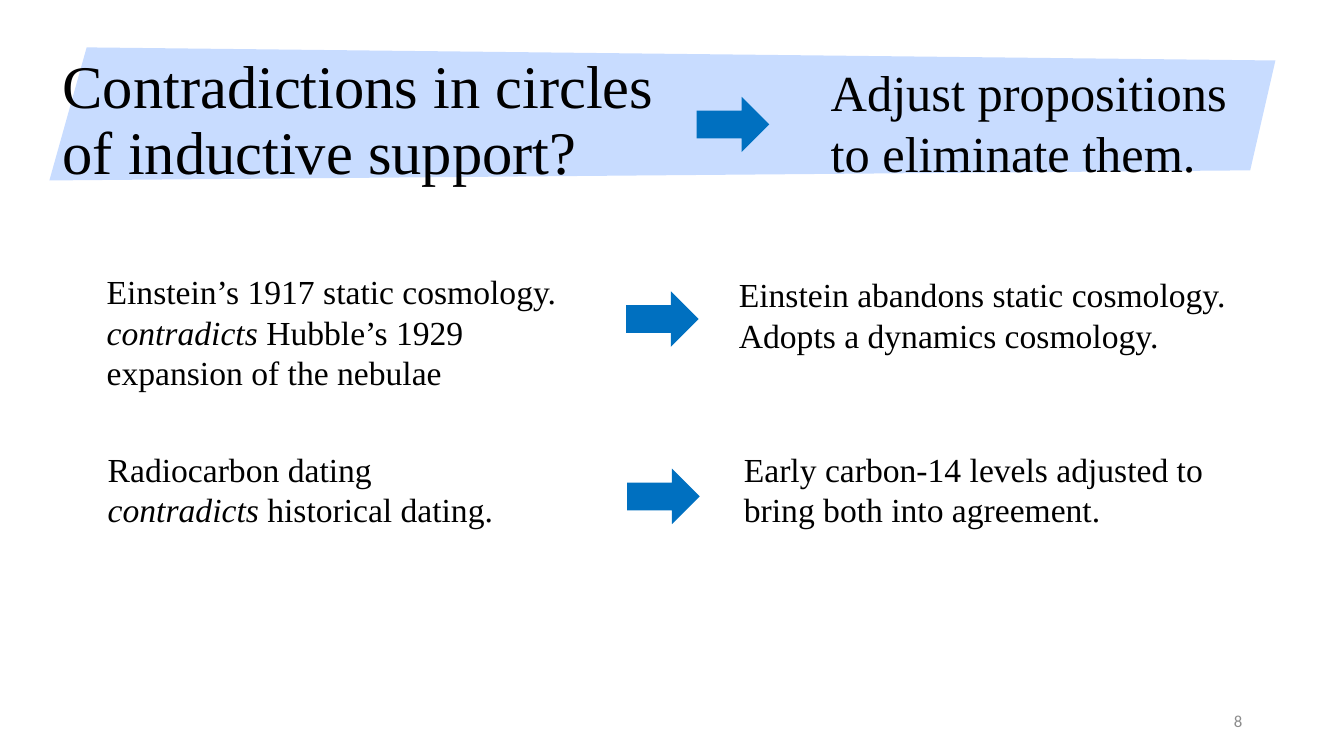
from dataclasses import dataclass

from pptx import Presentation
from pptx.dml.color import RGBColor
from pptx.enum.shapes import MSO_SHAPE
from pptx.enum.text import MSO_ANCHOR, MSO_AUTO_SIZE, PP_ALIGN
from pptx.util import Inches, Pt

RIGHT_ARROW = MSO_SHAPE.RIGHT_ARROW
TOP, MIDDLE = MSO_ANCHOR.TOP, MSO_ANCHOR.MIDDLE
LEFT, RIGHT = PP_ALIGN.LEFT, PP_ALIGN.RIGHT
NO_FIT = MSO_AUTO_SIZE.NONE


@dataclass(frozen=True)
class Theme:
    ink: RGBColor = RGBColor(0x00, 0x00, 0x00)
    grey: RGBColor = RGBColor(0x8C, 0x8C, 0x8C)
    banner: RGBColor = RGBColor(0xC8, 0xDC, 0xFF)
    arrow: RGBColor = RGBColor(0x00, 0x70, 0xC0)
    serif: str = "Times New Roman"
    sans: str = "Calibri"
    title: float = 43.2
    answer: float = 36
    body: float = 24
    number: float = 12


THEME = Theme()


def write(box, place, paragraphs, size, font=THEME.serif, color=THEME.ink,
          align=LEFT, anchor=TOP, spacing=1.0):
    for name, value in zip(("left", "top", "width", "height"), place):
        setattr(box, name, Inches(value))
    frame = box.text_frame
    frame_format = {"word_wrap": True, "auto_size": NO_FIT, "vertical_anchor": anchor}
    for name, value in frame_format.items():
        setattr(frame, name, value)
    for index, spans in enumerate(paragraphs):
        para = frame.add_paragraph() if index else frame.paragraphs[0]
        para.alignment = align
        para.line_spacing = spacing
        for text, italic in spans:
            span = para.add_run()
            span.text = text
            span.font.color.rgb = color
            for name, value in {"name": font, "size": Pt(size), "italic": italic}.items():
                setattr(span.font, name, value)


def add_arrow(shapes, left, top):
    arrow = shapes.add_shape(RIGHT_ARROW, Inches(left), Inches(top), Inches(0.72), Inches(0.55))
    arrow.shadow.inherit = False
    arrow.fill.solid()
    arrow.fill.fore_color.rgb = THEME.arrow
    arrow.line.fill.background()


deck = Presentation()
deck.slide_width = Inches(13.33)
deck.slide_height = Inches(7.5)
page = deck.slides.add_slide(deck.slide_layouts[5])

corners = [(0.86, 0.47), (12.65, 0.6), (12.4, 1.69), (0.49, 1.79)]
points = [(Inches(x), Inches(y)) for x, y in corners]
builder = page.shapes.build_freeform(*points[0])
builder.add_line_segments(points[1:], close=True)
banner = builder.convert_to_shape()
banner.shadow.inherit = False
banner.fill.solid()
banner.fill.fore_color.rgb = THEME.banner
banner.line.fill.background()

title = page.shapes.title
title._element.addprevious(banner._element)
write(title, (0.52, 0.51, 6.15, 1.4),
      [[("Contradictions in circles of inductive support?", False)]],
      THEME.title, anchor=MIDDLE, spacing=0.9)

number = page.shapes.add_textbox(0, 0, 0, 0)
write(number, (11.71, 6.95, 0.71, 0.4), [[("8", False)]], THEME.number,
      font=THEME.sans, color=THEME.grey, align=RIGHT, anchor=MIDDLE)

answer = page.shapes.add_textbox(0, 0, 0, 0)
write(answer, (8.14, 0.56, 4.28, 1.31),
      [[("Adjust propositions to eliminate them.", False)]], THEME.answer)
add_arrow(page.shapes, 6.91, 0.96)

examples = [
    ((0.96, 2.64, 4.94, 1.31),
     [[("Einstein’s 1917 static cosmology.", False)],
      [("contradicts", True), (" Hubble’s 1929 expansion of the nebulae", False)]],
     (6.21, 2.89),
     (7.23, 2.67, 5.14, 0.91),
     "Einstein abandons static cosmology. Adopts a dynamics cosmology."),
    ((0.97, 4.4, 5.41, 0.91),
     [[("Radiocarbon dating", False)],
      [("contradicts", True), (" historical dating.", False)]],
     (6.22, 4.65),
     (7.28, 4.4, 5.14, 0.91),
     "Early carbon-14 levels adjusted to bring both into agreement."),
]
for conflict_place, conflict, arrow_place, remedy_place, remedy in examples:
    group = page.shapes.add_group_shape()
    write(group.shapes.add_textbox(0, 0, 0, 0), conflict_place, conflict, THEME.body)
    add_arrow(group.shapes, *arrow_place)
    # placeholder
    write(group.shapes.add_textbox(0, 0, 0, 0), remedy_place, [[(remedy, False)]], THEME.body)

deck.save("out.pptx")
